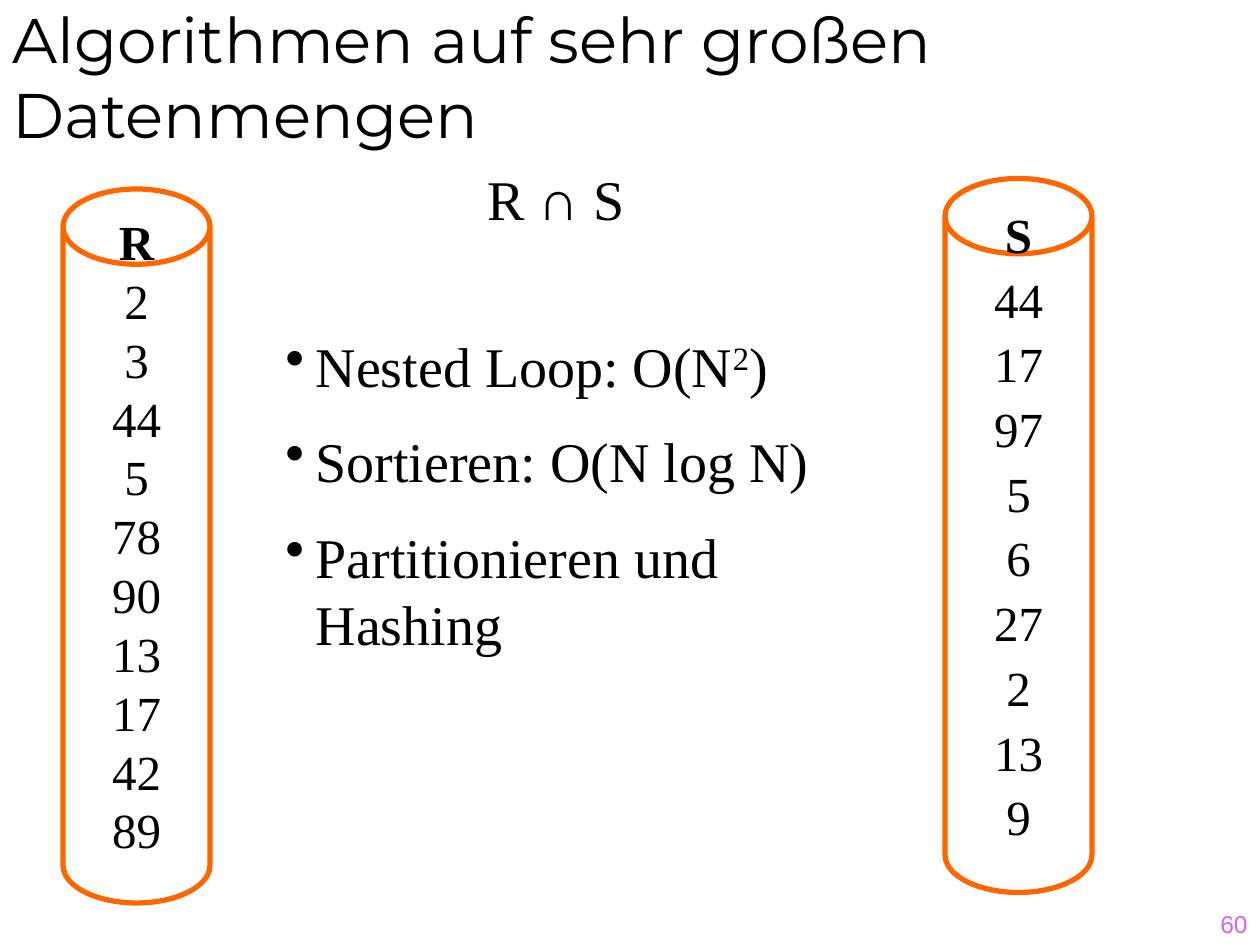
from dataclasses import dataclass

from lxml.etree import SubElement
from pptx import Presentation
from pptx.dml.color import RGBColor
from pptx.enum.shapes import MSO_SHAPE
from pptx.enum.text import MSO_ANCHOR, PP_ALIGN
from pptx.oxml.ns import qn
from pptx.util import Inches, Pt

BLACK = RGBColor(0x00, 0x00, 0x00)
WHITE = RGBColor(0xFF, 0xFF, 0xFF)
ORANGE = RGBColor(0xFF, 0x66, 0x00)
VIOLET = RGBColor(0xCC, 0x66, 0xFF)
SERIF = "Times New Roman"

deck = Presentation()
deck.slide_width, deck.slide_height = Inches(10), Inches(7.5)
CELL = deck.slide_width / 120  # grid of 120 columns by 90 rows
slide = deck.slides.add_slide(deck.slide_layouts[6])


@dataclass
class Box:
    col: float
    row: float
    cols: float
    rows: float

    def emu(self) -> list[int]:
        return [round(n * CELL) for n in (self.col, self.row, self.cols, self.rows)]


@dataclass
class Label:
    box: Box
    text: str
    font: str
    size: int
    color: RGBColor = BLACK
    align: PP_ALIGN = PP_ALIGN.LEFT
    anchor: MSO_ANCHOR = MSO_ANCHOR.TOP
    wrap: bool = True


@dataclass
class Can:
    box: Box
    name: str
    values: list[int]
    spacing: float
    foot: float  # bottom inset in inches, lifts the values above the base


def style(run, font: str, size: int, color: RGBColor, bold: bool = False) -> None:
    run.font.name = font
    run.font.size = Pt(size)
    run.font.bold = bold
    run.font.color.rgb = color


def draw_label(label: Label):
    shape = slide.shapes.add_textbox(*label.box.emu())
    frame = shape.text_frame
    frame.text = label.text
    frame.word_wrap = label.wrap
    frame.vertical_anchor = label.anchor
    for para in frame.paragraphs:
        para.alignment = label.align
        for run in para.runs:
            style(run, label.font, label.size, label.color)
    return frame


def draw_can(can: Can) -> None:
    shape = slide.shapes.add_shape(MSO_SHAPE.CAN, *can.box.emu())
    shape.adjustments[0] = 0.512
    shape.shadow.inherit = False
    shape.fill.solid()
    shape.fill.fore_color.rgb = WHITE
    shape.line.color.rgb = ORANGE
    shape.line.width = Pt(3)
    frame = shape.text_frame
    frame.word_wrap = False
    frame.vertical_anchor = MSO_ANCHOR.MIDDLE
    frame.margin_bottom = Inches(can.foot)
    frame.text = "\n".join([can.name, *map(str, can.values)])
    for i, para in enumerate(frame.paragraphs):
        para.alignment = PP_ALIGN.CENTER
        para.line_spacing = can.spacing
        style(para.runs[0], SERIF, 28, BLACK, bold=i == 0)


def add_bullet(para) -> None:
    props = para._p.get_or_add_pPr()
    props.set("marL", str(Inches(0.24)))
    props.set("indent", str(-Inches(0.24)))
    SubElement(props, qn("a:buChar")).set("char", "•")


# Page number and title
draw_label(Label(Box(95, 84, 25, 6), "60", "Arial", 14, VIOLET,
                 PP_ALIGN.RIGHT, MSO_ANCHOR.BOTTOM))
draw_label(Label(Box(0, 0, 120, 15), "Algorithmen auf sehr großen Datenmengen",
                 "Montserrat", 36, anchor=MSO_ANCHOR.BOTTOM))

# The two relations
for can in (
    Can(Box(6, 18, 14, 68), "R", [2, 3, 44, 5, 78, 90, 13, 17, 42, 89], 1.0, 0.52),
    Can(Box(90, 17, 14, 68), "S", [44, 17, 97, 5, 6, 27, 2, 13, 9], 1.1, 0.56),
):
    draw_can(can)

# Intersection and ways to compute it
draw_label(Label(Box(45.1, 15.1, 15.7, 7.6), "R ∩ S", SERIF, 32,
                 align=PP_ALIGN.CENTER, wrap=False))
ways = draw_label(Label(
    Box(26, 31, 62, 36.4),
    "Nested Loop: O(N\nSortieren: O(N log N)\nPartitionieren und Hashing",
    SERIF, 32))
for i, para in enumerate(ways.paragraphs):
    para.space_before = Pt(16 if i else 0)
    add_bullet(para)

# Raised exponent and closing bracket of the first way
for text, base in (("2", "30000"), (")", "0")):
    run = ways.paragraphs[0].add_run()
    run.text = text
    style(run, SERIF, 32, BLACK)
    run.font._element.set("baseline", base)

deck.save("out.pptx")
